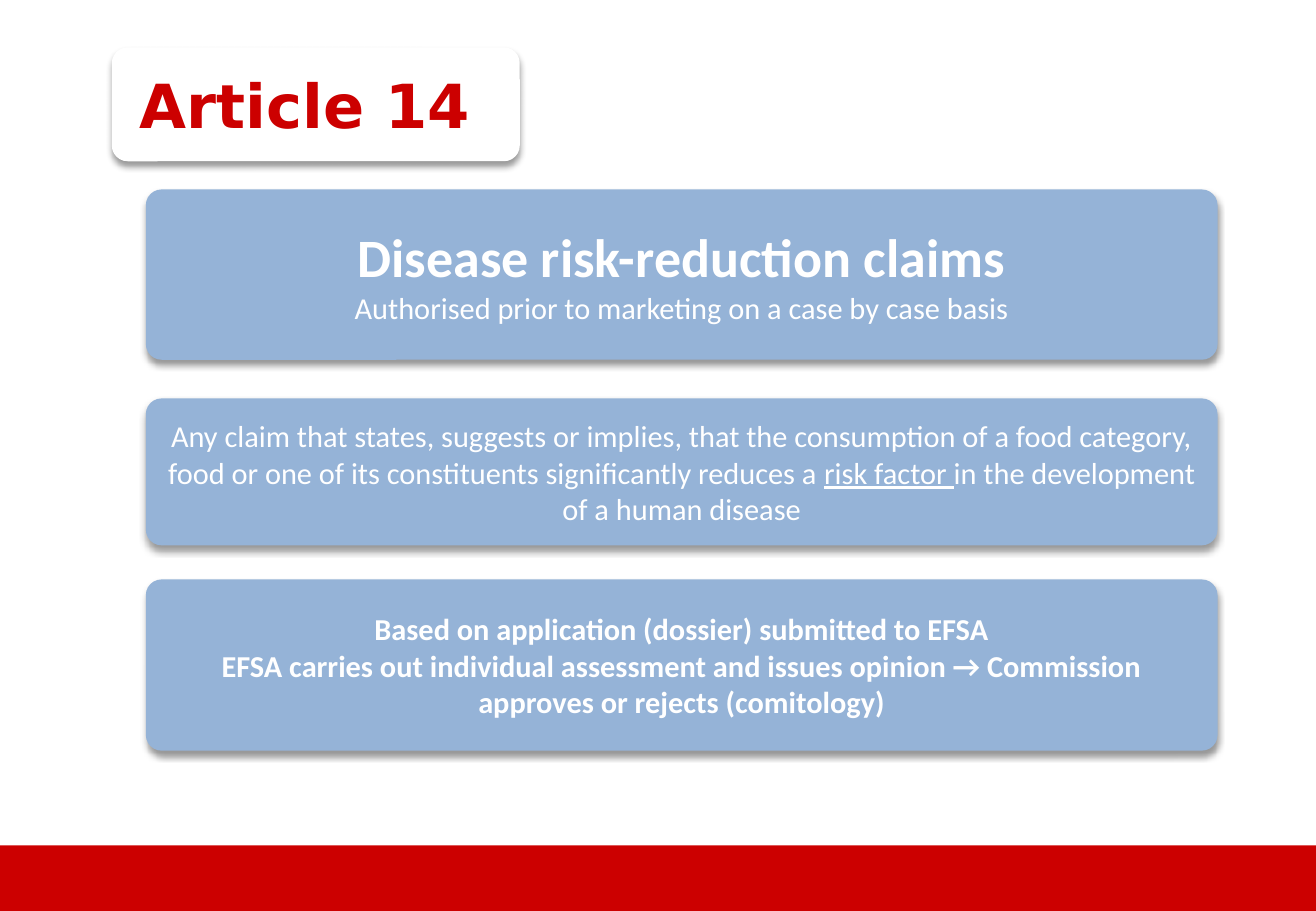
from lxml import etree
from pptx import Presentation
from pptx.dml.color import RGBColor
from pptx.enum.shapes import MSO_SHAPE
from pptx.enum.text import MSO_ANCHOR, PP_ALIGN
from pptx.oxml.ns import qn
from pptx.util import Inches, Pt

RECT, ROUND = MSO_SHAPE.RECTANGLE, MSO_SHAPE.ROUNDED_RECTANGLE
MIDDLE, CENTER = MSO_ANCHOR.MIDDLE, PP_ALIGN.CENTER

WIDE, HIGH = 10.83, 7.5
RADIUS = 0.13
COLORS = {"red": "CC0000", "blue": "95B3D7", "white": "FFFFFF", "black": "000000"}

BAR = (0, 0.928, 1, 0.072)
TITLE = {
    "area": (0.085, 0.052, 0.31, 0.125),
    "inset": 0.1,
    "lines": [[("Article 14 ", 36, True, False)]],
}
LEFT, SPAN = 0.1108, 0.8144
PANELS = [
    {
        "rows": (0.208, 0.187),
        "inset": 0.08,
        "lines": [
            [("Disease risk-reduction claims", 32, True, False)],
            [("Authorised prior to marketing on a case by case basis", 18, False, False)],
        ],
    },
    {
        "rows": (0.4373, 0.1613),
        "inset": 0.12,
        "lines": [
            [
                ("Any claim that states, suggests or implies, that the consumption of a food "
                 "category, food or one of its constituents significantly reduces a ",
                 18, False, False),
                ("risk factor ", 18, False, True),
                ("in the development of a human disease", 18, False, False),
            ],
        ],
    },
    {
        "rows": (0.636, 0.188),
        "inset": 0.12,
        "lines": [
            [("Based on application (dossier) submitted to EFSA", 18, True, False)],
            [("EFSA carries out individual assessment and issues opinion → Commission "
              "approves or rejects (comitology)", 18, True, False)],
        ],
    },
]


def color(name):
    return RGBColor.from_string(COLORS[name])


def add_block(slide, kind, area, fill):
    x, y, w, h = area
    block = slide.shapes.add_shape(
        kind, Inches(x * WIDE), Inches(y * HIGH), Inches(w * WIDE), Inches(h * HIGH))
    block.fill.solid()
    block.fill.fore_color.rgb = color(fill)
    block.line.fill.background()
    block.shadow.inherit = False
    return block


def add_shadow(block):
    effects = block._element.spPr.find(qn("a:effectLst"))
    outer = etree.SubElement(
        effects, qn("a:outerShdw"), blurRad=str(Pt(4)), dist=str(Pt(3)),
        dir=str(90 * 60000), rotWithShape="0")
    tint = etree.SubElement(outer, qn("a:srgbClr"), val=COLORS["black"])
    etree.SubElement(tint, qn("a:alpha"), val="40000")


def add_card(slide, area, fill, inset, lines, font, ink):
    card = add_block(slide, ROUND, area, fill)
    card.adjustments[0] = RADIUS / (area[3] * HIGH)
    add_shadow(card)
    frame = card.text_frame
    frame.word_wrap = True
    frame.vertical_anchor = MIDDLE
    frame.margin_left = frame.margin_right = Inches(inset)
    frame.margin_top = frame.margin_bottom = Inches(0.05)
    for i, line in enumerate(lines):
        para = frame.add_paragraph() if i else frame.paragraphs[0]
        para.alignment = CENTER
        for words, size, bold, under in line:
            run = para.add_run()
            run.text = words
            run.font.name = font
            run.font.size = Pt(size)
            run.font.bold = bold
            run.font.underline = under
            run.font.color.rgb = color(ink)


def main():
    deck = Presentation()
    deck.slide_width, deck.slide_height = Inches(WIDE), Inches(HIGH)
    slide = deck.slides.add_slide(deck.slide_layouts[6])
    add_block(slide, RECT, BAR, "red")
    add_card(slide, TITLE["area"], "white", TITLE["inset"], TITLE["lines"],
             "DejaVu Sans", "red")
    for panel in PANELS:
        top, tall = panel["rows"]
        add_card(slide, (LEFT, top, SPAN, tall), "blue", panel["inset"],
                 panel["lines"], "Calibri", "white")
    deck.save("out.pptx")


if __name__ == "__main__":
    main()
